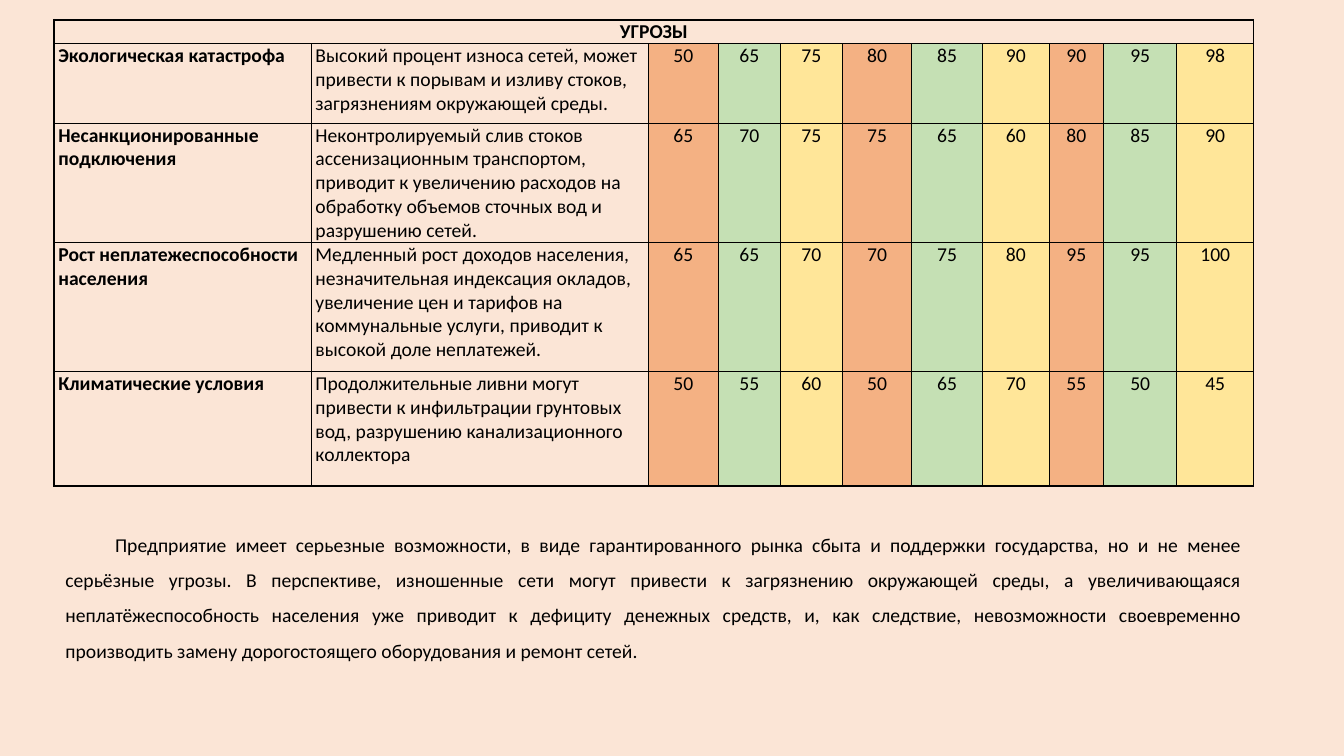
from dataclasses import dataclass
from itertools import cycle

from lxml.etree import SubElement
from pptx import Presentation
from pptx.dml.color import RGBColor
from pptx.enum.text import MSO_ANCHOR, MSO_AUTO_SIZE, PP_ALIGN
from pptx.oxml.ns import qn
from pptx.util import Cm, Pt


@dataclass(frozen=True)
class Theme:
    font: str = "Calibri"
    size: int = 14
    ink: str = "000000"
    background: str = "FBE5D6"
    score_fills: tuple = ("F4B183", "C5E0B4", "FFE699")
    outer_line: float = 1.5
    inner_line: float = 0.75


HEADING = "УГРОЗЫ"
THREATS = [
    ("Экологическая катастрофа",
     "Высокий процент износа сетей, может привести к порывам и изливу стоков, "
     "загрязнениям окружающей среды.",
     (50, 65, 75, 80, 85, 90, 90, 95, 98)),
    ("Несанкционированные подключения",
     "Неконтролируемый слив стоков ассенизационным транспортом, приводит к увеличению "
     "расходов на обработку объемов сточных вод и разрушению сетей.",
     (65, 70, 75, 75, 65, 60, 80, 85, 90)),
    ("Рост неплатежеспособности населения",
     "Медленный рост доходов населения, незначительная индексация окладов, увеличение "
     "цен и тарифов на коммунальные услуги, приводит к высокой доле неплатежей.",
     (65, 65, 70, 70, 75, 80, 95, 95, 100)),
    ("Климатические условия",
     "Продолжительные ливни могут привести к инфильтрации грунтовых вод, разрушению "
     "канализационного коллектора",
     (50, 55, 60, 50, 65, 70, 55, 50, 45)),
]
CONCLUSION = (
    "Предприятие имеет серьезные возможности, в виде гарантированного рынка сбыта и "
    "поддержки государства, но и не менее серьёзные угрозы. В перспективе, изношенные "
    "сети могут привести к загрязнению окружающей среды, а увеличивающаяся "
    "неплатёжеспособность населения уже приводит к дефициту денежных средств, и, как "
    "следствие, невозможности своевременно производить замену дорогостоящего "
    "оборудования и ремонт сетей."
)
COLUMN_WIDTHS = (6.48, 8.48, 1.78, 1.55, 1.57, 1.75, 1.78, 1.68, 1.37, 1.85, 1.93)
ROW_HEIGHTS = (0.58, 2.01, 2.97, 3.25, 2.87)


def write(frame, text, *, theme, bold=False, align=PP_ALIGN.LEFT, spacing=None, indent=0):
    paragraph = frame.paragraphs[0]
    paragraph.alignment = align
    if spacing:
        paragraph.line_spacing = spacing
    if indent:
        paragraph._p.get_or_add_pPr().set("indent", str(Cm(indent)))
    run = paragraph.add_run()
    run.text = text
    run.font.name = theme.font
    run.font.size = Pt(theme.size)
    run.font.bold = bold
    run.font.color.rgb = RGBColor.from_string(theme.ink)


class SlideBuilder:
    def __init__(self, slide, theme):
        self.slide = slide
        self.theme = theme

    def background(self):
        fill = self.slide.background.fill
        fill.solid()
        fill.fore_color.rgb = RGBColor.from_string(self.theme.background)

    def borders(self, cell, outer_edges):
        properties = cell._tc.get_or_add_tcPr()
        for side in "LRTB":
            width = self.theme.outer_line if side in outer_edges else self.theme.inner_line
            line = SubElement(properties, qn(f"a:ln{side}"), w=str(Pt(width)))
            SubElement(SubElement(line, qn("a:solidFill")), qn("a:srgbClr"), val=self.theme.ink)

    def cell(self, cell, text, *, outer_edges="", fill=None, **text_format):
        cell.margin_left = cell.margin_right = Cm(0.1)
        cell.margin_top = cell.margin_bottom = 0
        cell.vertical_anchor = MSO_ANCHOR.TOP
        self.borders(cell, outer_edges)
        if fill:
            cell.fill.solid()
            cell.fill.fore_color.rgb = RGBColor.from_string(fill)
        else:
            cell.fill.background()
        write(cell.text_frame, text, theme=self.theme, **text_format)

    def threat_table(self, left, top):
        table = self.slide.shapes.add_table(
            len(ROW_HEIGHTS), len(COLUMN_WIDTHS), Cm(left), Cm(top),
            Cm(sum(COLUMN_WIDTHS)), Cm(sum(ROW_HEIGHTS))).table
        table.first_row = table.horz_banding = False
        for column, width in zip(table.columns, COLUMN_WIDTHS):
            column.width = Cm(width)
        for row, height in zip(table.rows, ROW_HEIGHTS):
            row.height = Cm(height)

        last_column = len(COLUMN_WIDTHS) - 1
        heading = table.cell(0, 0)
        heading.merge(table.cell(0, last_column))
        self.cell(heading, HEADING, outer_edges="LRT", bold=True, align=PP_ALIGN.CENTER)
        for column in range(1, last_column + 1):
            self.borders(table.cell(0, column), "TR" if column == last_column else "T")

        for row, (name, effect, scores) in enumerate(THREATS, start=1):
            bottom = "B" if row == len(THREATS) else ""
            self.cell(table.cell(row, 0), name, outer_edges="L" + bottom, bold=True)
            self.cell(table.cell(row, 1), effect, outer_edges=bottom)
            for column, (score, fill) in enumerate(zip(scores, cycle(self.theme.score_fills)), start=2):
                right = "R" if column == last_column else ""
                self.cell(table.cell(row, column), str(score), outer_edges=right + bottom,
                          fill=fill, align=PP_ALIGN.CENTER)

    def text(self, text, left, top, width, height, **text_format):
        frame = self.slide.shapes.add_textbox(Cm(left), Cm(top), Cm(width), Cm(height)).text_frame
        frame.word_wrap = True
        frame.auto_size = MSO_AUTO_SIZE.SHAPE_TO_FIT_TEXT
        write(frame, text, theme=self.theme, **text_format)


def main():
    presentation = Presentation()
    presentation.slide_width = Cm(33.87)
    presentation.slide_height = Cm(19.05)
    builder = SlideBuilder(
        presentation.slides.add_slide(presentation.slide_layouts[6]), Theme())
    builder.background()
    builder.threat_table(1.37, 0.5)
    builder.text(CONCLUSION, 1.4, 13, 30.15, 3.84,
                 align=PP_ALIGN.JUSTIFY, spacing=1.5, indent=1.25)
    presentation.save("out.pptx")


if __name__ == "__main__":
    main()
